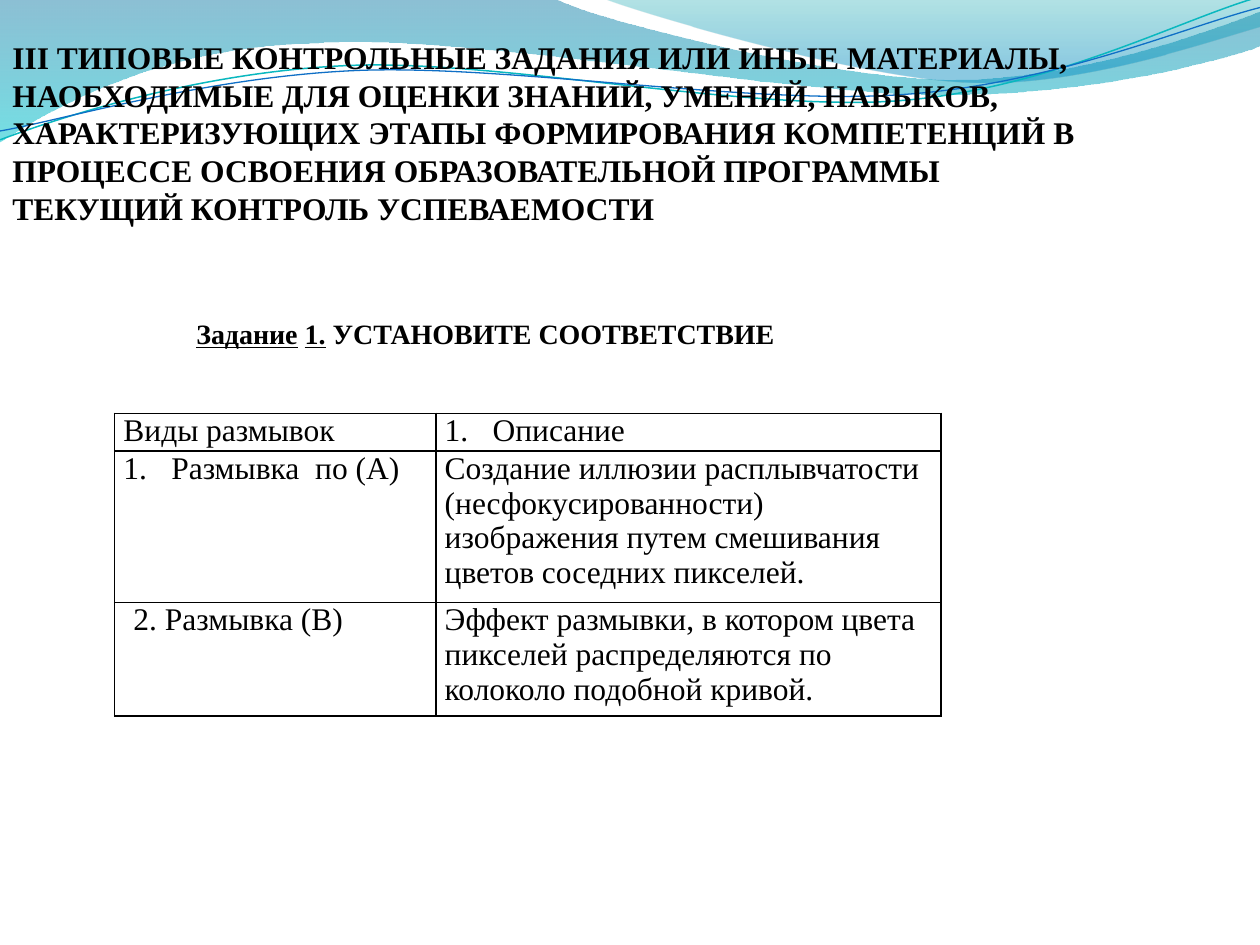
from math import cos, radians, sin

from lxml.etree import Element, SubElement
from pptx import Presentation
from pptx.dml.color import RGBColor
from pptx.enum.text import MSO_ANCHOR, MSO_AUTO_SIZE
from pptx.oxml.ns import qn
from pptx.util import Inches, Pt


def color(hex_code):
    return RGBColor.from_string(hex_code)


def add_run(paragraph, text, size, bold=False, underline=False):
    run = paragraph.add_run()
    run.text = text
    run.font.name = "Times New Roman"
    run.font.size = Pt(size)
    run.font.bold = bold
    run.font.underline = underline
    run.font.color.rgb = color("000000")


presentation = Presentation()
presentation.slide_width = Inches(10)
presentation.slide_height = Inches(7.5)
slide = presentation.slides.add_slide(presentation.slide_layouts[6])

wide_wave = [
    [(0, 0)], [(4.4, -0.01)],
    [(4.76, 0.17), (6.64, 0.63), (7.58, 0.63)],
    [(8.53, 0.63), (9.58, 0.26), (10, 0.09)],
    [(10.01, 0.36)],
    [(9.83, 0.44), (8.7, 0.76), (7.46, 0.75)],
    [(6.22, 0.75), (3.82, 0.28), (2.57, 0.34)],
    [(1.29, 0.36), (0.46, 0.83), (-0.01, 1.13)],
    [(0, 0)],
]
right_wave = [
    [(4.79, -0.01)],
    [(5.09, 0.11), (6.82, 0.62), (7.69, 0.65)],
    [(8.56, 0.69), (9.61, 0.32), (10, 0.21)],
    [(10, 0)],
    [(4.79, -0.01)],
]
teal_curve = [
    [(0, 1.11)],
    [(0.48, 0.93), (1.58, 0.57), (2.77, 0.52)],
    [(3.95, 0.47), (5.93, 0.89), (7.13, 0.8)],
    [(8.33, 0.71), (9.38, 0.15), (9.98, -0.02)],
]
blue_curve = [
    [(0, 1.04)],
    [(0.47, 0.96), (1.64, 0.61), (2.83, 0.56)],
    [(4.03, 0.51), (5.97, 0.84), (7.17, 0.75)],
    [(8.36, 0.67), (9.41, 0.21), (10, 0.06)],
]
wave_parts = [
    (wide_wave, [(0, "0074A1", 45), (1, "00C6CF", 55)], None, 0, (0, 0)),
    (right_wave, [(0, "00A1A9", 30), (0.8, "008BBF", 45)], None, 0, (0, 0)),
    (teal_curve, None, ("0AB8BF", 0.85), 2.7, (4.99, 0.58)),
    (blue_curve, None, ("0F6FC6", 0.75), 2.7, (5, 0.59)),
]
for segments, gradient, stroke, tilt, (center_x, center_y) in wave_parts:
    cosine, sine = cos(radians(tilt)), sin(radians(tilt))
    level = [
        [(Inches(center_x + (x - center_x) * cosine - (y - center_y) * sine),
          Inches(center_y + (x - center_x) * sine + (y - center_y) * cosine))
         for x, y in segment]
        for segment in segments
    ]
    builder = slide.shapes.build_freeform(*level[0][0])
    builder.add_line_segments([segment[-1] for segment in level[1:]], close=gradient is not None)
    wave = builder.convert_to_shape()
    wave.shadow.inherit = False
    for edge, segment in zip(list(wave._element.iter(qn("a:lnTo"))), level[1:]):
        if len(segment) == 3:
            curve = Element(qn("a:cubicBezTo"))
            for x, y in segment:
                SubElement(curve, qn("a:pt"), x=str(x - wave.left), y=str(y - wave.top))
            edge.getparent().replace(edge, curve)
    wave.rotation = -tilt
    if gradient:
        wave.line.fill.background()
        wave.fill.gradient()
        wave.fill.gradient_angle = 270
        for stop, (position, hex_code, opacity) in zip(wave.fill.gradient_stops, gradient):
            stop.position = position
            stop.color.rgb = color(hex_code)
        for tone, (position, hex_code, opacity) in zip(wave._element.spPr.iter(qn("a:srgbClr")), gradient):
            SubElement(tone, qn("a:alpha"), val=str(opacity * 1000))
    else:
        wave.fill.background()
        wave.line.color.rgb = color(stroke[0])
        wave.line.width = Pt(stroke[1])

heading = slide.shapes.add_textbox(Inches(0), Inches(0.15), Inches(10), Inches(1.96)).text_frame
heading.word_wrap = True
heading.vertical_anchor = MSO_ANCHOR.MIDDLE
heading.margin_top = Inches(0.14)
heading.margin_bottom = Inches(0.3)
add_run(
    heading.paragraphs[0],
    "III ТИПОВЫЕ КОНТРОЛЬНЫЕ ЗАДАНИЯ ИЛИ ИНЫЕ МАТЕРИАЛЫ, НАОБХОДИМЫЕ ДЛЯ ОЦЕНКИ "
    "ЗНАНИЙ, УМЕНИЙ, НАВЫКОВ, ХАРАКТЕРИЗУЮЩИХ ЭТАПЫ ФОРМИРОВАНИЯ КОМПЕТЕНЦИЙ В "
    "ПРОЦЕССЕ ОСВОЕНИЯ ОБРАЗОВАТЕЛЬНОЙ ПРОГРАММЫ",
    18, bold=True,
)
add_run(heading.add_paragraph(), "ТЕКУЩИЙ КОНТРОЛЬ УСПЕВАЕМОСТИ", 18, bold=True)

task = slide.shapes.add_textbox(Inches(1.46), Inches(2.46), Inches(7.09), Inches(0.37)).text_frame
task.word_wrap = True
task.auto_size = MSO_AUTO_SIZE.SHAPE_TO_FIT_TEXT
task.vertical_anchor = MSO_ANCHOR.MIDDLE
for text, underline in [
    ("Задание", True), (" ", False), ("1.", True), (" УСТАНОВИТЕ СООТВЕТСТВИЕ", False),
]:
    add_run(task.paragraphs[0], text, 16, bold=True, underline=underline)

numbered = (0.38, -0.38, True)
hanging = (1.75, -1.67, False)
blur_rows = [
    [("Виды размывок", None), ("Описание", numbered)],
    [("Размывка  по (А)", numbered),
     ("Создание иллюзии расплывчатости (несфокусированности) изображения путем "
      "смешивания цветов соседних пикселей.", None)],
    [("2. Размывка (В)", hanging),
     ("Эффект размывки, в котором цвета пикселей распределяются по колоколо "
      "подобной кривой.", None)],
]
blur_table = slide.shapes.add_table(
    3, 2, Inches(0.91), Inches(3.28), Inches(6.56), Inches(2.4)
).table
blur_table.first_row = False
blur_table.horz_banding = False
for column, width in zip(blur_table.columns, (2.55, 4.01)):
    column.width = Inches(width)
for row, height in zip(blur_table.rows, (0.3, 1.2, 0.9)):
    row.height = Inches(height)
for row, entries in zip(blur_table.rows, blur_rows):
    for cell, (text, indent) in zip(row.cells, entries):
        cell.margin_left = cell.margin_right = Inches(0.07)
        cell.margin_top = cell.margin_bottom = 0
        paragraph = cell.text_frame.paragraphs[0]
        add_run(paragraph, text, 18)
        if indent:
            left, first, has_number = indent
            properties = paragraph._p.get_or_add_pPr()
            properties.set("marL", str(Inches(left)))
            properties.set("indent", str(Inches(first)))
            if has_number:
                SubElement(properties, qn("a:buFont"), typeface="+mj-lt")
                SubElement(properties, qn("a:buAutoNum"), type="arabicPeriod")
            else:
                paragraph.line_spacing = 0.99
        cell_properties = cell._tc.get_or_add_tcPr()
        for side in ("lnL", "lnR", "lnT", "lnB"):
            border = SubElement(cell_properties, qn(f"a:{side}"), w=str(Pt(1)))
            border_fill = SubElement(border, qn("a:solidFill"))
            SubElement(border_fill, qn("a:srgbClr"), val="000000")
        cell.fill.background()

presentation.save("out.pptx")
